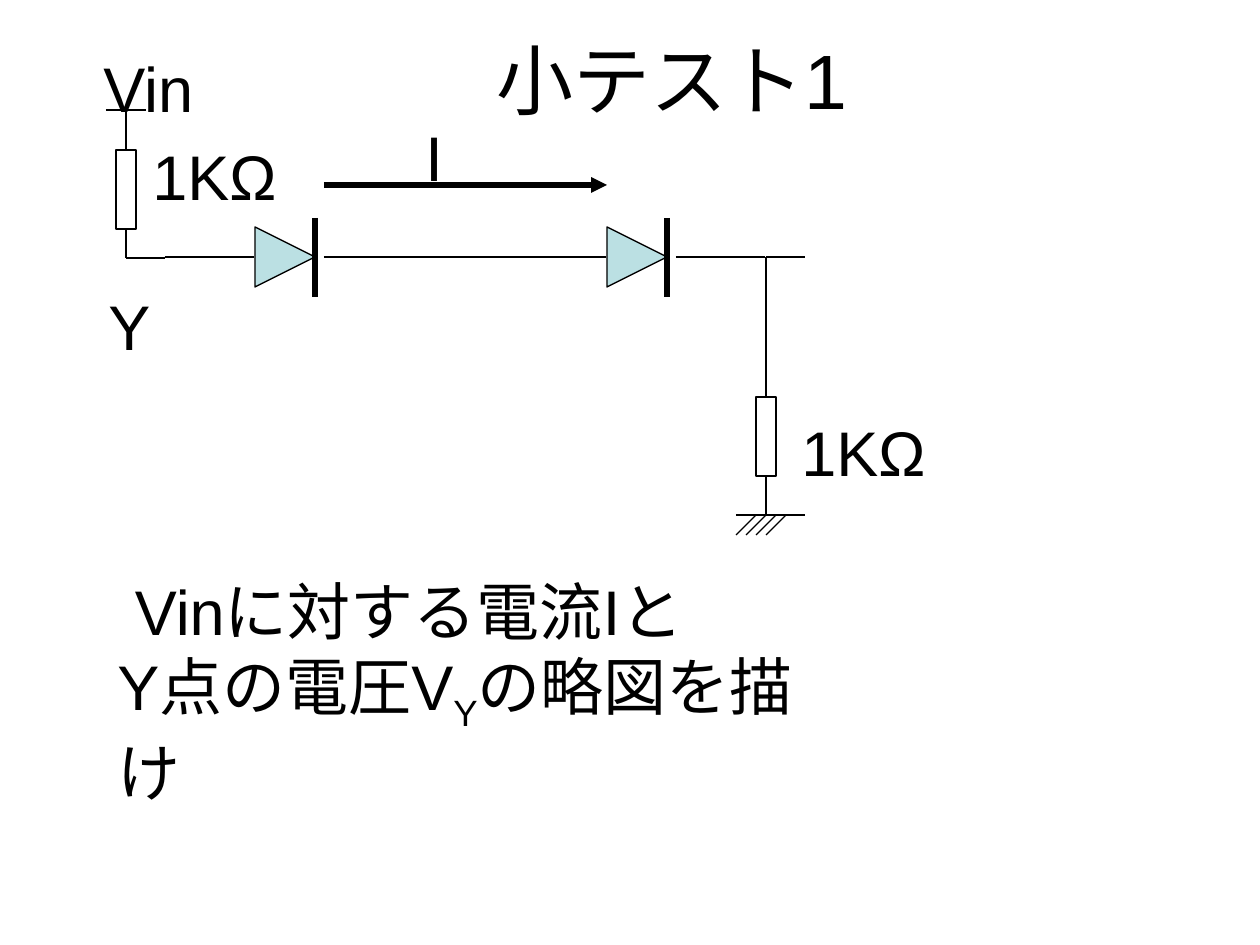
from lxml import etree
from pptx import Presentation
from pptx.dml.color import RGBColor
from pptx.enum.shapes import MSO_CONNECTOR, MSO_SHAPE
from pptx.enum.text import MSO_ANCHOR, PP_ALIGN
from pptx.oxml.ns import qn
from pptx.util import Pt

STRAIGHT = MSO_CONNECTOR.STRAIGHT
RECTANGLE = MSO_SHAPE.RECTANGLE
TRIANGLE = MSO_SHAPE.ISOSCELES_TRIANGLE
TOP_ANCHOR, MIDDLE_ANCHOR = MSO_ANCHOR.TOP, MSO_ANCHOR.MIDDLE
LEFT_ALIGN, CENTER_ALIGN = PP_ALIGN.LEFT, PP_ALIGN.CENTER
TOP_SIDE, BOTTOM_SIDE = 0, 2
PX_PER_INCH = 126


def px(length):
    return round(length * 914400 / PX_PER_INCH)


def color(value):
    return RGBColor.from_string(value)


class Circuit:
    """Draws circuit parts and labels on one page in a shared style."""

    ink = "000000"
    diode_fill = "BBE0E3"
    font = "Arial"
    thin, thick = 0.75, 3

    def __init__(self, page):
        self.page = page

    def outline(self, item, width):
        item.line.color.rgb = color(self.ink)
        item.line.width = Pt(width)

    def wire(self, start, end, width=thin, parent=None, arrow=False):
        shapes = (parent or self.page).shapes
        line = shapes.add_connector(STRAIGHT, *map(px, start + end))
        self.outline(line, width)
        if arrow:
            head = etree.SubElement(line.line._get_or_add_ln(), qn("a:tailEnd"))
            head.set("type", "triangle")
        etree.SubElement(line._element.spPr, qn("a:effectLst"))
        return line

    def shape(self, kind, left, top, width, height, fill=None, parent=None):
        shapes = (parent or self.page).shapes
        item = shapes.add_shape(kind, *map(px, (left, top, width, height)))
        item.shadow.inherit = False
        if fill:
            item.fill.solid()
            item.fill.fore_color.rgb = color(fill)
        else:
            item.fill.background()
        self.outline(item, self.thin)
        return item

    def diode(self, left, y):
        group = self.page.shapes.add_group_shape()
        triangle = self.shape(TRIANGLE, left + 90, y - 30, 60, 60, self.diode_fill, group)
        triangle.rotation = 90
        self.wire((left + 150, y - 39), (left + 150, y + 40), self.thick, group)
        for start in (left, left + 159):
            self.wire((start, y), (start + 89, y), parent=group)

    def resistor(self, x, top, lead_start, lead_end):
        height = 79
        body = self.shape(RECTANGLE, x - 10, top, 20, height)
        self.wire((x, lead_start), (x, top)).end_connect(body, TOP_SIDE)
        self.wire((x, top + height), (x, lead_end)).begin_connect(body, BOTTOM_SIDE)

    def ground(self, left, y):
        group = self.page.shapes.add_group_shape()
        self.wire((left, y), (left + 69, y), parent=group)
        for index in range(4):
            foot = left + 10 * index
            self.wire((foot + 20, y), (foot, y + 20), parent=group)

    def text(self, left, top, width, height, paragraphs, size=36,
             wrap=False, anchor=TOP_ANCHOR, align=LEFT_ALIGN):
        box = self.page.shapes.add_textbox(*map(px, (left, top, width, height)))
        frame = box.text_frame
        frame.word_wrap = wrap
        frame.vertical_anchor = anchor
        for index, runs in enumerate(paragraphs):
            para = frame.add_paragraph() if index else frame.paragraphs[0]
            para.alignment = align
            for words, baseline in runs:
                span = para.add_run()
                span.text = words
                span.font.name = self.font
                span.font.size = Pt(size)
                span.font.color.rgb = color(self.ink)
                if baseline:
                    span._r.get_or_add_rPr().set("baseline", str(baseline * 1000))

    def label(self, words, left, top, width):
        self.text(left, top, width, 89, [[(words, 0)]])


def main():
    deck = Presentation()
    deck.slide_width, deck.slide_height = px(1260), px(945)
    page = deck.slides.add_slide(deck.slide_layouts[6])
    circuit = Circuit(page)

    circuit.text(105, 0, 1134, 158, [[("小テスト1", 0)]], size=44, wrap=True,
                 anchor=MIDDLE_ANCHOR, align=CENTER_ALIGN)

    input_x, output_x, wire_y, ground_y = 126, 766, 257, 515
    for left in (165, 517):
        circuit.diode(left, wire_y)
    circuit.resistor(input_x, 150, 110, 258)
    circuit.resistor(output_x, 397, 357, ground_y)
    circuit.ground(736, ground_y)

    for start, end in (
        ((106, 110), (146, 110)),
        ((input_x, 258), (165, 258)),
        ((402, wire_y), (520, wire_y)),
        ((output_x, wire_y), (805, wire_y)),
        ((output_x, wire_y), (output_x, 357)),
    ):
        circuit.wire(start, end)
    circuit.wire((324, 185), (607, 185), circuit.thick, arrow=True)

    for words, left, top, width in (
        ("Vin", 91, 43, 116),
        ("Y", 96, 281, 84),
        ("1KΩ", 140, 131, 151),
        ("1KΩ", 789, 407, 151),
        ("I", 413, 112, 43),
    ):
        circuit.label(words, left, top, width)
    circuit.text(105, 566, 762, 165, [
        [(" Vinに対する電流Iと", 0)],
        [("Y点の電圧V", 0), ("Y", -25), ("の略図を描け", 0)],
    ], wrap=True)

    deck.save("out.pptx")


if __name__ == "__main__":
    main()
